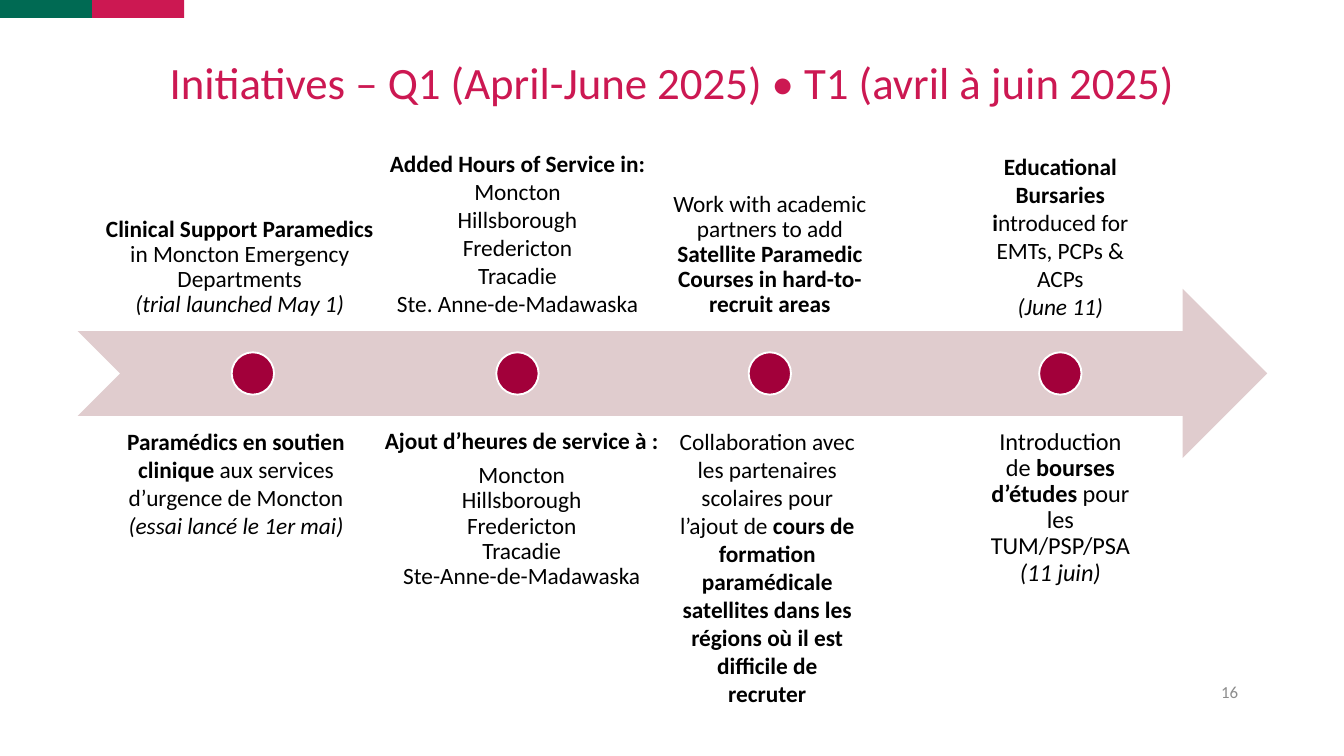
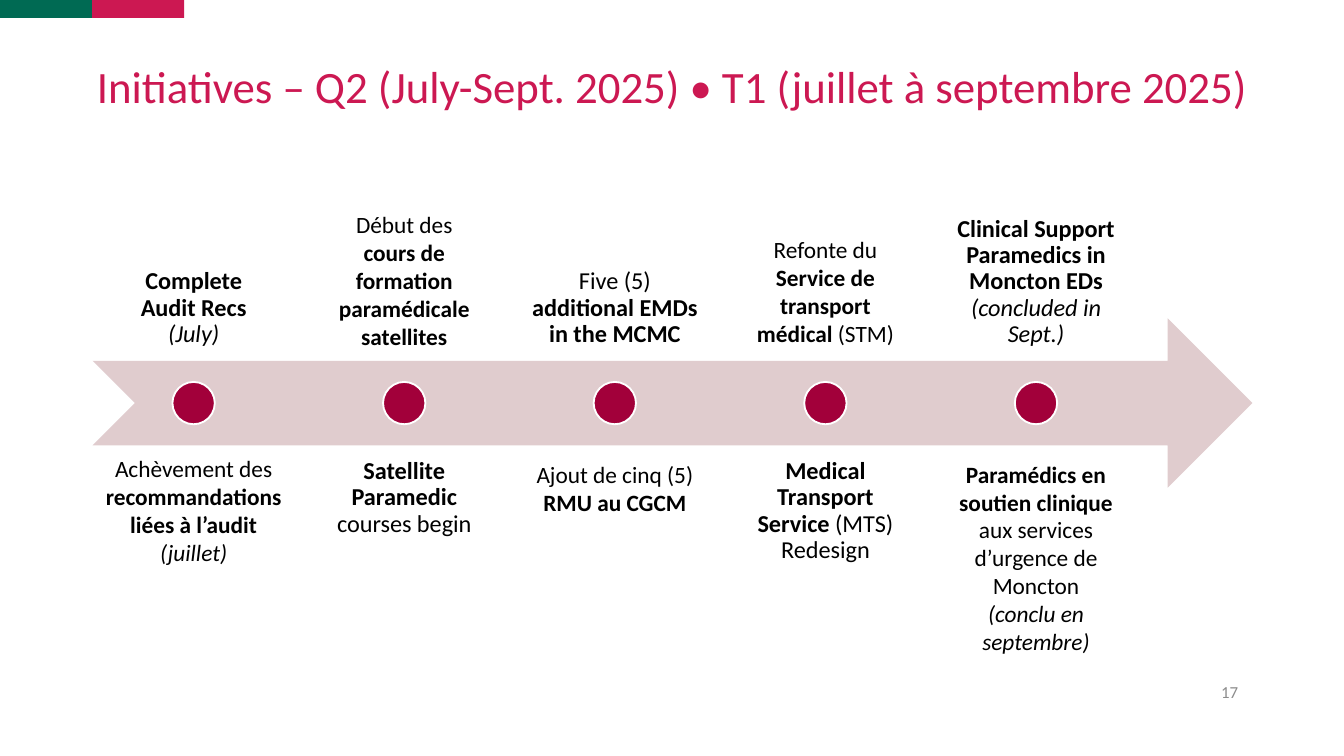
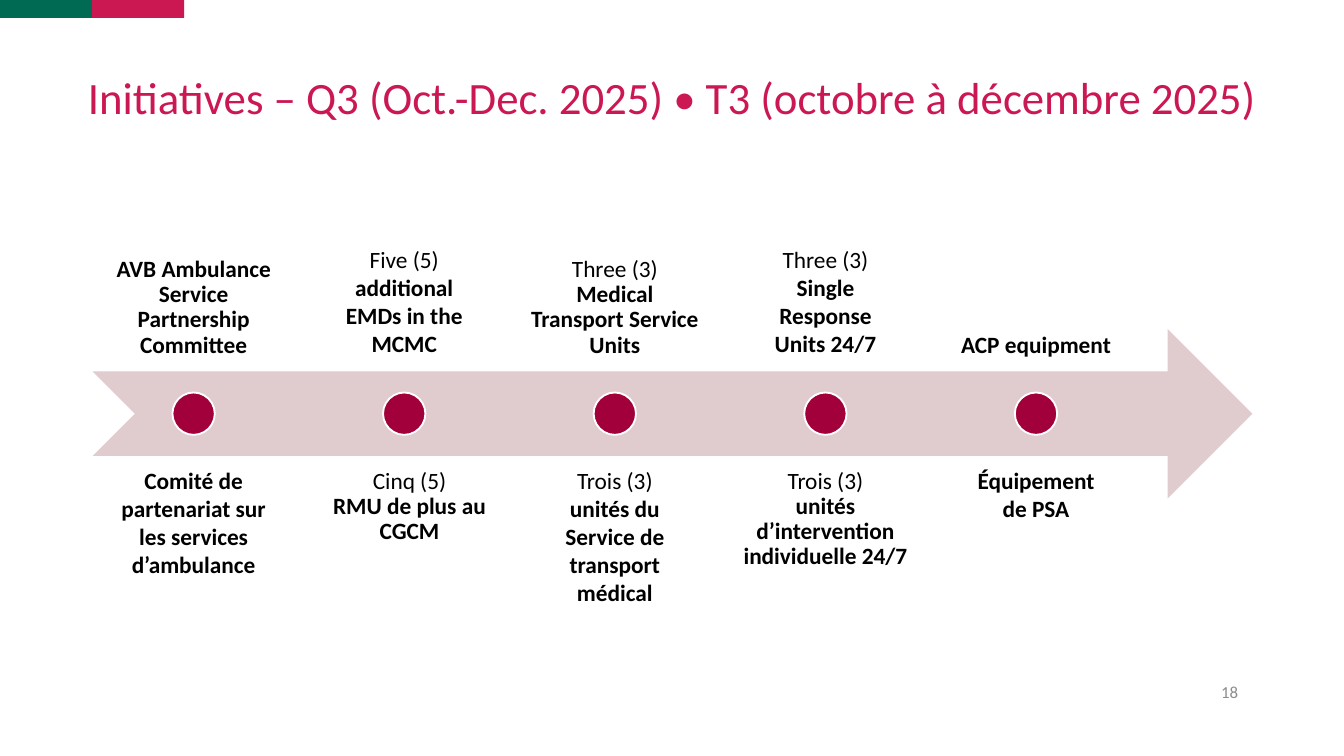
from copy import deepcopy
from dataclasses import dataclass

from pptx import Presentation
from pptx.dml.color import RGBColor
from pptx.enum.shapes import MSO_SHAPE
from pptx.enum.text import MSO_ANCHOR, PP_ALIGN
from pptx.util import Cm, Pt


@dataclass(frozen=True)
class Theme:
    font: str = "Calibri"
    green: str = "006A53"
    pink: str = "CC1852"
    arrow: str = "E0CCCE"
    dot: str = "A2003A"
    white: str = "FFFFFF"
    black: str = "000000"
    grey: str = "8C8C8C"
    title_size: float = 24
    label_size: float = 12.5
    large_label_size: float = 13
    number_size: float = 9


@dataclass
class Label:
    """Text centred on a milestone; without a top it hugs the arrow."""
    paragraphs: list
    width: float = 3.78
    top: float = None
    height: float = 3.2
    dx: float = 0
    size: float = Theme.label_size


T = Theme()
BIG = T.large_label_size
ARROW_H = 3.2
LABEL_SHIFT = 2.4
DOT = 0.8
EVEN_COLUMNS = [3.66 + 3.98 * i for i in range(5)]

slides = [
    {
        "title": "Initiatives – Q1 (April-June 2025) • T1 (avril à juin 2025)",
        "title_box": (0.66, 1.88),
        "arrow": (1.47, 5.46, 22.48),
        "columns": [4.78, 9.78, 14.55, 20.04],
        "above": [
            Label([[("Clinical Support Paramedics\n", "b"),
                    ("in Moncton Emergency Departments", "")],
                   [("(trial launched May 1)", "i")]], width=6.12, dx=-0.25),
            Label([[("Added Hours of Service in:", "b")],
                   [("Moncton\nHillsborough\nFredericton\nTracadie\n"
                     "Ste. Anne-de-Madawaska", "")]],
                  width=5.38, top=2.69, height=3.56),
            Label([[("Work with academic partners to add ", ""),
                    ("Satellite Paramedic Courses in hard-to-recruit areas", "b")]],
                  width=4.37),
            Label([[("Educational Bursaries i", "b"),
                    ("ntroduced for EMTs, PCPs & ACPs\n", ""),
                    ("(June 11)", "i")]], width=3.35, top=2.74, height=3.45),
        ],
        "below": [
            Label([[("Paramédics en soutien clinique ", "b"),
                    ("aux services d’urgence de Moncton\n", ""),
                    ("(essai lancé le 1er mai)", "i")]],
                  width=5.41, top=7.95, height=3.02, dx=-0.32),
            Label([[("Ajout d’heures de service à :", "b")],
                   [("Moncton\nHillsborough\nFredericton\nTracadie\n"
                     "Ste-Anne-de-Madawaska", "")]], width=5.94, dx=0.08),
            Label([[("Collaboration avec les partenaires scolaires pour l’ajout de ", ""),
                    ("cours de formation paramédicale satellites dans les "
                     "régions où il est difficile de recruter", "b")]],
                  width=3.81, top=7.95, height=6.38, dx=-0.05),
            Label([[("Introduction de ", ""), ("bourses d’études ", "b"),
                    ("pour les TUM/PSP/PSA\n", ""), ("(11 juin)", "i")]],
                  width=3.3, size=BIG),
        ],
    },
    {
        "title": "Initiatives – Q2 (July-Sept. 2025) • T1 (juillet à septembre 2025)",
        "title_box": (0.81, 1.75),
        "arrow": (1.75, 6.02, 21.92),
        "columns": EVEN_COLUMNS,
        "above": [
            Label([[("Complete\nAudit Recs\n", "b"), ("(July)", "i")]], size=BIG),
            Label([[("Début des", "")],
                   [("cours de formation paramédicale satellites", "b")]],
                  width=3.25, top=3.84, height=3),
            Label([[("Five (5)\n", ""), ("additional EMDs in the MCMC", "b")]], size=BIG),
            Label([[("Refonte du ", ""), ("Service de transport médical ", "b"),
                    ("(STM)", "")]], width=3.25, top=4.32, height=2.39),
            Label([[("Clinical Support Paramedics in Moncton EDs ", "b"),
                    ("(concluded in Sept.)", "i")]], size=BIG),
        ],
        "below": [
            Label([[("Achèvement des ", ""), ("recommandations liées à l’audit\n", "b"),
                    ("(juillet)", "i")]], width=3.91, top=8.46, height=2.92),
            Label([[("Satellite Paramedic ", "b"), ("courses begin", "")]], size=BIG),
            Label([[("Ajout de cinq (5) ", ""), ("RMU au CGCM", "b")]],
                  width=3.48, top=8.56, height=1.32),
            Label([[("Medical Transport Service ", "b"), ("(MTS) Redesign", "")]],
                  size=BIG),
            Label([[("Paramédics en soutien clinique\n", "b"),
                    ("aux services d’urgence de Moncton", "")],
                   [("(conclu en septembre)", "i")]],
                  width=3.66, top=8.56, height=3.99),
        ],
    },
    {
        "title": "Initiatives – Q3 (Oct.-Dec. 2025) • T3 (octobre à décembre 2025)",
        "title_box": (0.86, 2.06),
        "arrow": (1.75, 6.22, 21.92),
        "columns": EVEN_COLUMNS,
        "above": [
            Label([[("AVB Ambulance Service Partnership Committee", "b")]]),
            Label([[("Five (5)\n", ""), ("additional EMDs in the MCMC", "b")]],
                  width=2.95, top=4.5, height=2.39),
            Label([[("Three (3)\n", ""), ("Medical Transport Service Units", "b")]]),
            Label([[("Three (3)\n", ""), ("Single Response Units 24/7", "b")]],
                  width=2.77, top=4.5, height=2.39),
            Label([[("ACP equipment", "b")]]),
        ],
        "below": [
            Label([[("Comité de partenariat sur les services d’ambulance", "b")]],
                  width=3.38, top=8.69, height=2.39),
            Label([[("Cinq (5)\n", ""), ("RMU de plus au CGCM", "b")]], dx=0.1),
            Label([[("Trois (3)\n", ""),
                    ("unités du Service de transport médical", "b")]],
                  width=3.38, top=8.69, height=2.92),
            Label([[("Trois (3)\n", ""),
                    ("unités d’intervention individuelle 24/7", "b")]]),
            Label([[("Équipement de PSA", "b")]], width=3.07, top=8.69, height=1.32),
        ],
    },
]


def add_shape(s, kind, left, top, width, height, fill, line=None):
    sp = s.shapes.add_shape(kind, Cm(left), Cm(top), Cm(width), Cm(height))
    sp.shadow.inherit = False
    sp.fill.solid()
    sp.fill.fore_color.rgb = RGBColor.from_string(fill)
    if line:
        sp.line.color.rgb = RGBColor.from_string(line)
        sp.line.width = Pt(1)
    else:
        sp.line.fill.background()


def add_text(s, left, top, width, height, paragraphs, size, color=T.black,
             anchor=MSO_ANCHOR.MIDDLE, align=PP_ALIGN.CENTER,
             spacing=1.0, after=0, margin=0.13):
    tf = s.shapes.add_textbox(Cm(left), Cm(top), Cm(width), Cm(height)).text_frame
    tf.word_wrap = True
    tf.vertical_anchor = anchor
    tf.margin_left = tf.margin_right = Cm(0.25)
    tf.margin_top = tf.margin_bottom = Cm(margin)
    for i, runs in enumerate(paragraphs):
        p = tf.add_paragraph() if i else tf.paragraphs[0]
        p.alignment = align
        p.line_spacing = spacing
        if i < len(paragraphs) - 1:
            p.space_after = Pt(after)
        for text, style in runs:
            for n, line in enumerate(text.split("\n")):
                if n:
                    # A break keeps the type size of the run before it
                    p.add_line_break()
                    p._p[-1].append(deepcopy(r._r.rPr))
                if line:
                    r = p.add_run()
                    r.text = line
                    r.font.name = T.font
                    r.font.size = Pt(size)
                    r.font.color.rgb = RGBColor.from_string(color)
                    r.font.bold = style == "b"
                    r.font.italic = style == "i"


prs = Presentation()
prs.slide_width, prs.slide_height = Cm(25.4), Cm(14.29)

for number, content in enumerate(slides, start=16):
    s = prs.slides.add_slide(prs.slide_layouts[6])

    # Corner bands, title and page number
    for i, color in enumerate((T.green, T.pink)):
        add_shape(s, MSO_SHAPE.RECTANGLE, 1.74 * i, 0, 1.74, 0.34, color)
    title_top, title_height = content["title_box"]
    add_text(s, 1.38, title_top, 22.64, title_height, [[(content["title"], "")]],
             T.title_size, T.pink, spacing=0.9)
    add_text(s, 17.93, 12.7, 5.72, 0.76, [[(str(number), "")]],
             T.number_size, T.grey, align=PP_ALIGN.RIGHT)

    # Timeline arrow with its milestones
    left, top, width = content["arrow"]
    add_shape(s, MSO_SHAPE.NOTCHED_RIGHT_ARROW, left, top, width, ARROW_H, T.arrow)
    for x in content["columns"]:
        add_shape(s, MSO_SHAPE.OVAL, x - DOT / 2, top + (ARROW_H - DOT) / 2,
                  DOT, DOT, T.dot, T.white)

    # Labels above and below the arrow
    for side, shift, anchor in (("above", -LABEL_SHIFT, MSO_ANCHOR.BOTTOM),
                                ("below", LABEL_SHIFT, MSO_ANCHOR.TOP)):
        for x, label in zip(content["columns"], content[side]):
            x += label.dx - label.width / 2
            if label.top is None:
                add_text(s, x, top + shift, label.width, label.height,
                         label.paragraphs, label.size, anchor=anchor, spacing=0.9,
                         after=5 if side == "below" else 0, margin=0.25)
            else:
                add_text(s, x, label.top, label.width, label.height,
                         label.paragraphs, label.size, anchor=MSO_ANCHOR.TOP)

prs.save("out.pptx")
